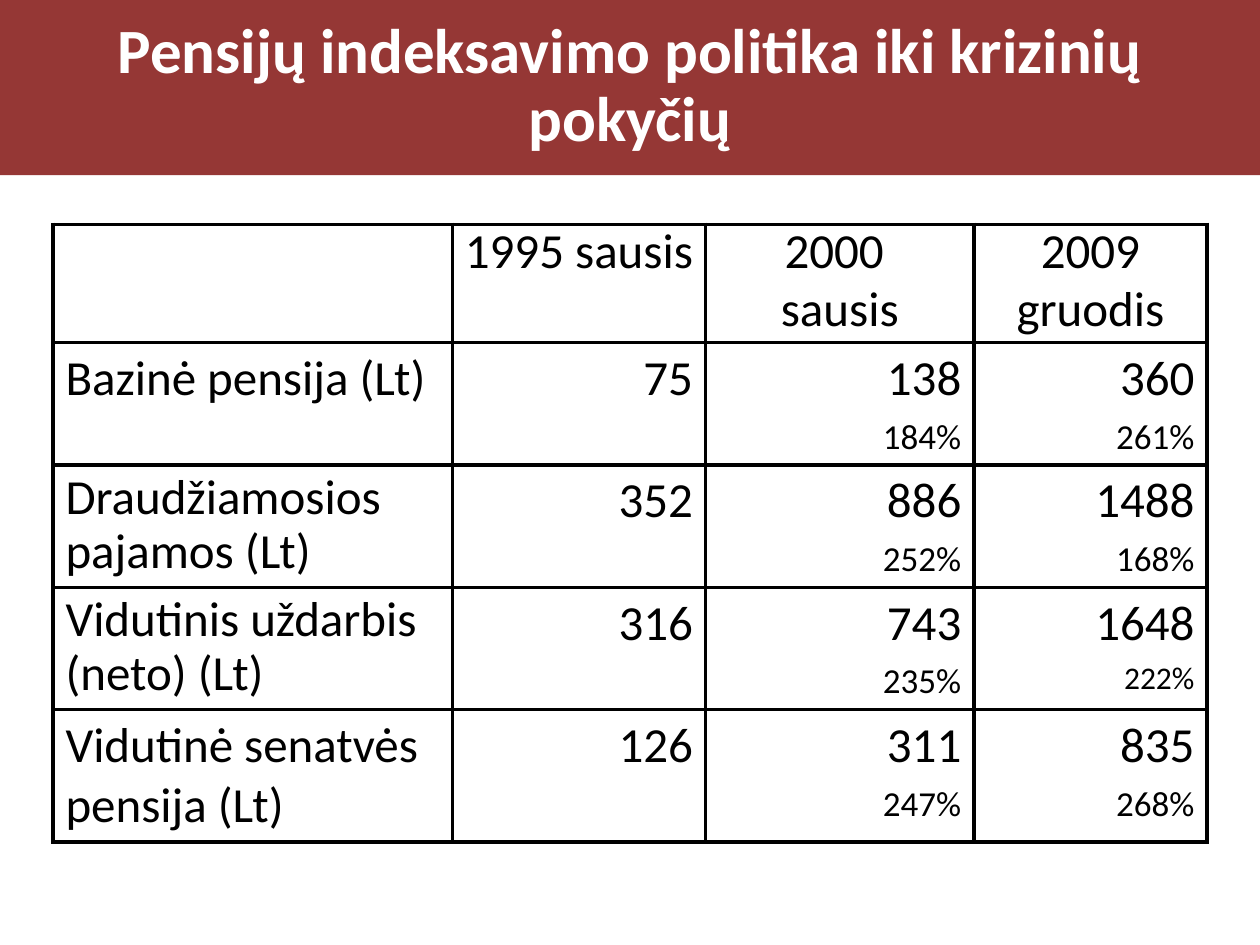
from lxml import etree
from pptx import Presentation
from pptx.dml.color import RGBColor
from pptx.enum.text import MSO_ANCHOR, PP_ALIGN
from pptx.oxml.ns import qn
from pptx.util import Inches, Pt

COLORS = {"band": "953735", "title": "FFFFFF", "text": "000000", "line": "000000"}
FONT = "Calibri"

HEADER = ["", "1995 sausis", "2000 \nsausis", "2009\ngruodis"]
ROWS = [
    ["Bazinė pensija (Lt)", "75", "138\n184%", "360\n261%"],
    ["Draudžiamosios pajamos (Lt)", "352", "886\n252%", "1488\n168%"],
    ["Vidutinis uždarbis (neto) (Lt)", "316", "743\n235%", "1648\n222%"],
    ["Vidutinė senatvės pensija (Lt)", "126", "311\n247%", "835\n268%"],
]
COL_WIDTHS = [3.17, 2.01, 2.13, 1.85]
ROW_HEIGHTS = [0.83, 0.72, 0.83, 0.96, 0.93]
LABEL_SPACING = {2: 0.9, 3: 0.9}  # tighter two-line row labels
SMALL_SIZES = {(3, 3): 18}        # percentages are 20 pt elsewhere


def style_runs(p, size, color, bold=False):
    for r in p.runs:
        r.font.size = Pt(size)
        r.font.name = FONT
        r.font.bold = bold
        r.font.color.rgb = RGBColor.from_string(COLORS[color])


def set_borders(cell, width=2.25):
    tcPr = cell._tc.get_or_add_tcPr()
    for i, side in enumerate(("lnL", "lnR", "lnT", "lnB")):
        ln = etree.Element(qn(f"a:{side}"), w=str(Pt(width)))
        fill = etree.SubElement(ln, qn("a:solidFill"))
        etree.SubElement(fill, qn("a:srgbClr"), val=COLORS["line"])
        tcPr.insert(i, ln)


def add_title(s, left, top, width, height):
    title = s.shapes.title
    title.left, title.top = Inches(left), Inches(top)
    title.width, title.height = Inches(width), Inches(height)
    title.fill.solid()
    title.fill.fore_color.rgb = RGBColor.from_string(COLORS["band"])
    tf = title.text_frame
    tf.text = "Pensijų indeksavimo politika iki krizinių pokyčių"
    tf.word_wrap = True
    tf.vertical_anchor = MSO_ANCHOR.MIDDLE
    p = tf.paragraphs[0]
    p.alignment = PP_ALIGN.CENTER
    p.line_spacing = 0.9
    style_runs(p, 36, "title", bold=True)


def fill_cell(cell, text, row, col):
    cell.fill.background()
    set_borders(cell)
    cell.text_frame.text = text
    for i, p in enumerate(cell.text_frame.paragraphs):
        size = 28
        if row == 0:
            p.alignment = PP_ALIGN.CENTER
            p.line_spacing = 0.8
        elif col == 0:
            p.alignment = PP_ALIGN.LEFT
            p.line_spacing = LABEL_SPACING.get(row, 1.0)
        else:
            p.alignment = PP_ALIGN.RIGHT
            if i > 0:
                size = SMALL_SIZES.get((row, col), 20)
        p.space_before = Pt(0.2 * size)
        style_runs(p, size, "text")


def add_pension_table(s, left, top, width, height):
    data = [HEADER] + ROWS
    frame = s.shapes.add_table(len(data), len(HEADER), Inches(left), Inches(top),
                               Inches(width), Inches(height))
    table = frame.table
    table.first_row = table.horz_banding = False
    for column, w in zip(table.columns, COL_WIDTHS):
        column.width = Inches(w)
    for row, h in zip(table.rows, ROW_HEIGHTS):
        row.height = Inches(h)
    for r, texts in enumerate(data):
        for c, text in enumerate(texts):
            fill_cell(table.cell(r, c), text, r, c)


def main():
    prs = Presentation()
    prs.slide_width, prs.slide_height = Inches(10), Inches(7.5)
    s = prs.slides.add_slide(prs.slide_layouts[5])
    # Title band
    add_title(s, 0, 0, 10, 1.39)
    # Pension and earnings table
    add_pension_table(s, 0.42, 1.78, sum(COL_WIDTHS), 4.88)
    prs.save("out.pptx")


if __name__ == "__main__":
    main()
